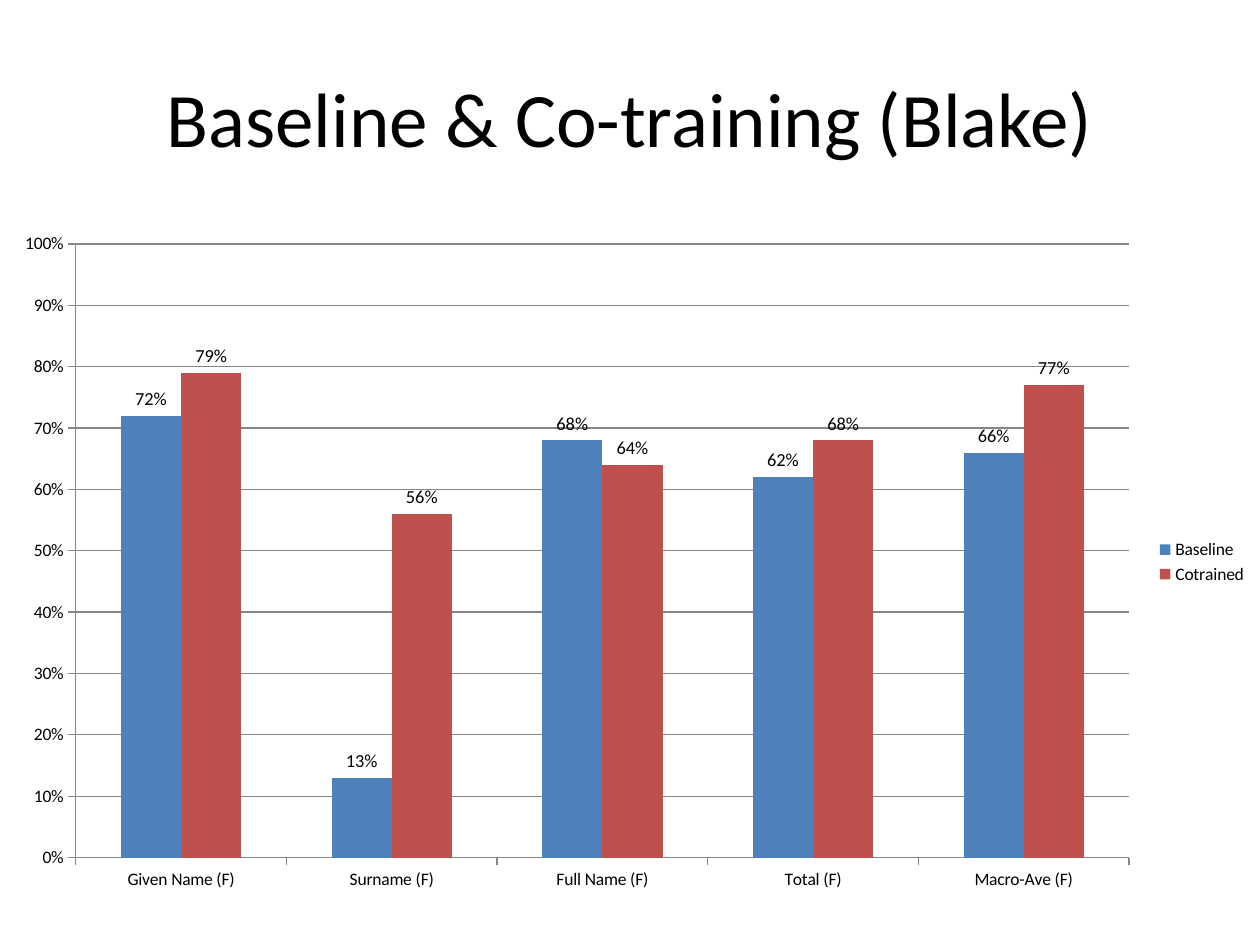
from pptx import Presentation
from pptx.chart.data import CategoryChartData
from pptx.dml.color import RGBColor
from pptx.enum.chart import (XL_CHART_TYPE, XL_LABEL_POSITION,
                             XL_LEGEND_POSITION, XL_TICK_MARK)
from pptx.enum.text import MSO_ANCHOR, PP_ALIGN
from pptx.util import Inches, Pt

BLACK = RGBColor(0x00, 0x00, 0x00)
GRAY = RGBColor(0x86, 0x86, 0x86)
BLUE = RGBColor(0x4F, 0x81, 0xBD)
RED = RGBColor(0xC0, 0x50, 0x4D)
FONT = "Calibri"

GROUPS = ["Given Name (F)", "Surname (F)", "Full Name (F)", "Total (F)",
          "Macro-Ave (F)"]
SCORES = [
    ("Baseline", BLUE, [0.72, 0.13, 0.68, 0.62, 0.66]),
    ("Cotrained", RED, [0.79, 0.56, 0.64, 0.68, 0.77]),
]


def set_font(font, size, color=BLACK):
    font.name = FONT
    font.size = Pt(size)
    font.color.rgb = color


def put_text(frame, text, size=18, color=BLACK, align=PP_ALIGN.LEFT,
             anchor=MSO_ANCHOR.TOP):
    frame.word_wrap = True
    frame.vertical_anchor = anchor
    para = frame.paragraphs[0]
    para.alignment = align
    run = para.add_run()
    run.text = text
    set_font(run.font, size, color)


def add_title(slide, box, text):
    title = slide.shapes.title
    title.left, title.top, title.width, title.height = box
    put_text(title.text_frame, text, size=44, align=PP_ALIGN.CENTER,
             anchor=MSO_ANCHOR.MIDDLE)


def set_line(line):
    line.color.rgb = GRAY
    line.width = Pt(0.75)


def style_axes(chart):
    for axis in (chart.category_axis, chart.value_axis):
        axis.major_tick_mark = XL_TICK_MARK.OUTSIDE
        axis.minor_tick_mark = XL_TICK_MARK.NONE
        set_line(axis.format.line)
        set_font(axis.tick_labels.font, 10)
    scale = chart.value_axis
    scale.minimum_scale = 0
    scale.maximum_scale = 1
    scale.major_unit = 0.1
    scale.has_major_gridlines = True
    set_line(scale.major_gridlines.format.line)
    scale.tick_labels.number_format = "0%"
    scale.tick_labels.number_format_is_linked = False


def style_bars(plot):
    plot.vary_by_categories = False
    plot.gap_width = 150
    plot.overlap = 0
    for series, (_, color, _) in zip(plot.series, SCORES):
        series.invert_if_negative = False
        series.format.fill.solid()
        series.format.fill.fore_color.rgb = color
        labels = series.data_labels
        labels.show_value = True
        labels.number_format = "0%"
        labels.number_format_is_linked = False
        labels.position = XL_LABEL_POSITION.OUTSIDE_END
        set_font(labels.font, 10.5)


def add_scores(slide, box):
    data = CategoryChartData(number_format="0%")
    data.categories = GROUPS
    for name, _, values in SCORES:
        data.add_series(name, values)
    chart = slide.shapes.add_chart(XL_CHART_TYPE.COLUMN_CLUSTERED, *box,
                                   data).chart
    set_font(chart.font, 10)
    chart.has_title = False
    chart.has_legend = True
    chart.legend.position = XL_LEGEND_POSITION.RIGHT
    chart.legend.include_in_layout = False
    set_font(chart.legend.font, 10)
    style_axes(chart)
    style_bars(chart.plots[0])


def main():
    deck = Presentation()
    deck.slide_width, deck.slide_height = Inches(10), Inches(7.5)
    slide = deck.slides.add_slide(deck.slide_layouts.get_by_name("Title Only"))
    add_title(slide, (Inches(0.5), Inches(0.3), Inches(9), Inches(1.25)),
              "Baseline & Co-training (Blake)")
    add_scores(slide, (Inches(0), Inches(1.75), Inches(10), Inches(5.42)))
    deck.save("out.pptx")


if __name__ == "__main__":
    main()
